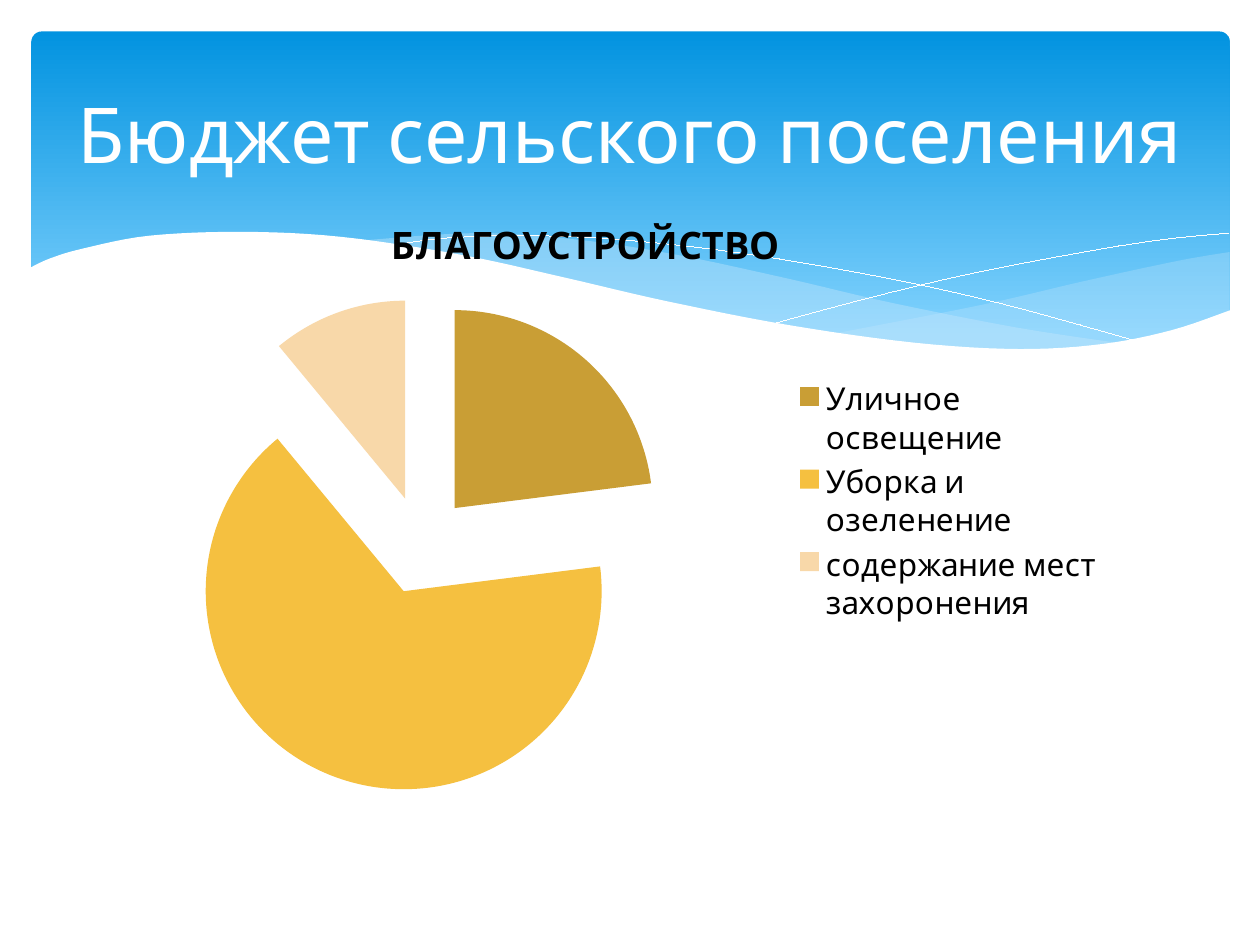
"""Build the settlement budget slide with a wave banner and an exploded pie chart."""
from dataclasses import dataclass
from typing import Optional

from lxml import etree
from pptx import Presentation
from pptx import util as u
from pptx.chart import data as chart_data
from pptx.dml import color
from pptx.enum import chart as chart_enum
from pptx.enum import shapes, text
from pptx.oxml import ns

FONT = "Cabin"
COLORS = {
    "banner_top": "0293E0",
    "banner_bottom": "83D3FE",
    "mist": "C6E7FC",
    "white": "FFFFFF",
    "black": "000000",
    "lighting": "C99E35",
    "greening": "F5C040",
    "burial": "F8D8A9",
}
Point = tuple[float, float]


@dataclass(frozen=True)
class Wave:
    edges: list[list[Point]]
    fill: Optional[str] = None
    opacity: int = 100


@dataclass(frozen=True)
class Slice:
    label: str
    value: int
    fill: str


WAVES = [
    Wave([
        [(9.76, 2), (9.35, 2.07), (8.61, 2.23), (7.79, 2.42), (6.61, 2.65)],
        [(6.61, 2.65), (7.19, 2.72), (8.03, 2.78), (8.81, 2.73), (9.35, 2.62), (9.76, 2.47)],
    ], "mist", 29),
    Wave([
        [(8.93, 2.73), (8.07, 2.6), (7.06, 2.4), (6.29, 2.22), (5.41, 2.03),
         (4.65, 1.91), (3.8, 1.85), (2.86, 1.91)],
        [(2.86, 1.91), (3.62, 2.03), (4.49, 2.22), (5.66, 2.48), (6.5, 2.64),
         (7.36, 2.75), (8.18, 2.78), (8.93, 2.73)],
    ], "mist", 40),
    Wave([[(3.09, 1.95), (3.53, 1.89), (4.16, 1.87), (4.89, 1.9), (5.82, 2),
           (6.95, 2.19), (7.95, 2.41), (9.07, 2.72)]]),
    Wave([[(6.13, 2.57), (6.95, 2.35), (7.76, 2.16), (8.66, 1.99), (9.24, 1.9), (9.75, 1.85)]]),
    Wave([
        [(9.77, 2.46), (9.3, 2.62), (8.75, 2.73), (8.09, 2.77), (7.26, 2.72),
         (6.26, 2.58), (5.29, 2.39), (4.47, 2.2), (3.65, 2.02), (2.71, 1.88),
         (1.93, 1.84), (1.19, 1.87), (0.67, 1.97), (0.4, 2.05), (0.23, 2.13)],
        [(0.23, 2.13), (0.23, 3.29)],
        [(0.23, 3.29), (9.77, 3.29)],
    ], "white"),
]
SLICES = [
    Slice("Уличное освещение", 23, "lighting"),
    Slice("Уборка и озеленение", 66, "greening"),
    Slice("содержание мест захоронения", 11, "burial"),
]


def rgb(name: str) -> color.RGBColor:
    """Return a palette colour."""
    return color.RGBColor.from_string(COLORS[name])


def smooth(anchors: list[Point], steps: int = 6) -> list[Point]:
    """Sample a Catmull-Rom curve through the anchors."""
    padded = [anchors[0], *anchors, anchors[-1]]
    curve = [anchors[0]]
    for before, start, end, after in zip(padded, padded[1:], padded[2:], padded[3:]):
        for step in range(1, steps + 1):
            t = step / steps
            curve.append(tuple(
                (2 * b + (c - a) * t + (2 * a - 5 * b + 4 * c - d) * t ** 2
                 + (3 * b - a - 3 * c + d) * t ** 3) / 2
                for a, b, c, d in zip(before, start, end, after)
            ))
    return curve


def draw_banner(page) -> None:
    """Draw the rounded gradient banner."""
    banner = page.shapes.add_shape(
        shapes.MSO_SHAPE.ROUNDED_RECTANGLE,
        u.Inches(0.25), u.Inches(0.25), u.Inches(9.51), u.Inches(2.7),
    )
    banner.adjustments[0] = 0.03
    banner.shadow.inherit = False
    banner.line.fill.background()
    banner.fill.gradient()
    banner.fill.gradient_angle = 270
    for stop, name, position in zip(
        banner.fill.gradient_stops, ("banner_top", "banner_bottom"), (0, 0.9)
    ):
        stop.color.rgb = rgb(name)
        stop.position = position


def draw_wave(page, wave: Wave) -> None:
    """Draw a filled wave, or a white hairline when it has no fill."""
    points = [(u.Inches(x), u.Inches(y)) for edge in wave.edges for x, y in smooth(edge)]
    builder = page.shapes.build_freeform(*points[0], scale=1.0)
    builder.add_line_segments(points[1:], close=wave.fill is not None)
    shape = builder.convert_to_shape()
    shape.shadow.inherit = False
    if wave.fill is None:
        shape.fill.background()
        shape.line.color.rgb = rgb("white")
        shape.line.width = u.Pt(0.01)
        return
    shape.line.fill.background()
    shape.fill.solid()
    shape.fill.fore_color.rgb = rgb(wave.fill)
    if wave.opacity < 100:
        tint = shape.element.spPr.find(f"{ns.qn('a:solidFill')}/{ns.qn('a:srgbClr')}")
        etree.SubElement(tint, ns.qn("a:alpha"), val=str(wave.opacity * 1000))


def style_font(font, size: float, name: str, bold: bool = False) -> None:
    """Set the face, size, colour and weight of a font."""
    font.name = FONT
    font.size = u.Pt(size)
    font.bold = bold
    font.color.rgb = rgb(name)


def add_title(page, words: str) -> None:
    """Add the centred slide title."""
    box = page.shapes.add_textbox(u.Inches(0.5), u.Inches(0.37), u.Inches(9), u.Inches(1.37))
    frame = box.text_frame
    frame.word_wrap = True
    frame.vertical_anchor = text.MSO_ANCHOR.MIDDLE
    para = frame.paragraphs[0]
    para.alignment = text.PP_ALIGN.CENTER
    span = para.add_run()
    span.text = words
    style_font(span.font, 44, "white")


def add_pie(page, heading: str, slices: list[Slice]) -> None:
    """Add the exploded pie chart with its heading and legend."""
    figures = chart_data.CategoryChartData()
    figures.categories = [part.label for part in slices]
    figures.add_series(heading, [part.value for part in slices])
    chart = page.shapes.add_chart(
        chart_enum.XL_CHART_TYPE.PIE,
        u.Inches(0.43), u.Inches(1.53), u.Inches(8.43), u.Inches(4.9), figures,
    ).chart
    style_font(chart.font, 18, "black")
    chart.has_title = True
    chart.chart_title.include_in_layout = False
    span = chart.chart_title.text_frame.paragraphs[0].add_run()
    span.text = heading
    style_font(span.font, 21.6, "black", bold=True)
    chart.has_legend = True
    chart.legend.position = chart_enum.XL_LEGEND_POSITION.RIGHT
    chart.legend.include_in_layout = False
    style_font(chart.legend.font, 18, "black")
    plot = chart.plots[0]
    plot.vary_by_categories = True
    series = plot.series[0]
    for index, part in enumerate(slices):
        fill = series.points[index].format.fill
        fill.solid()
        fill.fore_color.rgb = rgb(part.fill)
    for look in series._element.iter(ns.qn("c:dPt")):
        explosion = etree.Element(ns.qn("c:explosion"), val="25")
        look.find(ns.qn("c:spPr")).addprevious(explosion)


def main() -> None:
    """Build and save the deck."""
    deck = Presentation()
    deck.slide_width, deck.slide_height = u.Inches(10), u.Inches(7.5)
    page = deck.slides.add_slide(deck.slide_layouts[6])
    draw_banner(page)
    for wave in WAVES:
        draw_wave(page, wave)
    add_title(page, "Бюджет сельского поселения")
    add_pie(page, "БЛАГОУСТРОЙСТВО", SLICES)
    deck.save("out.pptx")


if __name__ == "__main__":
    main()
